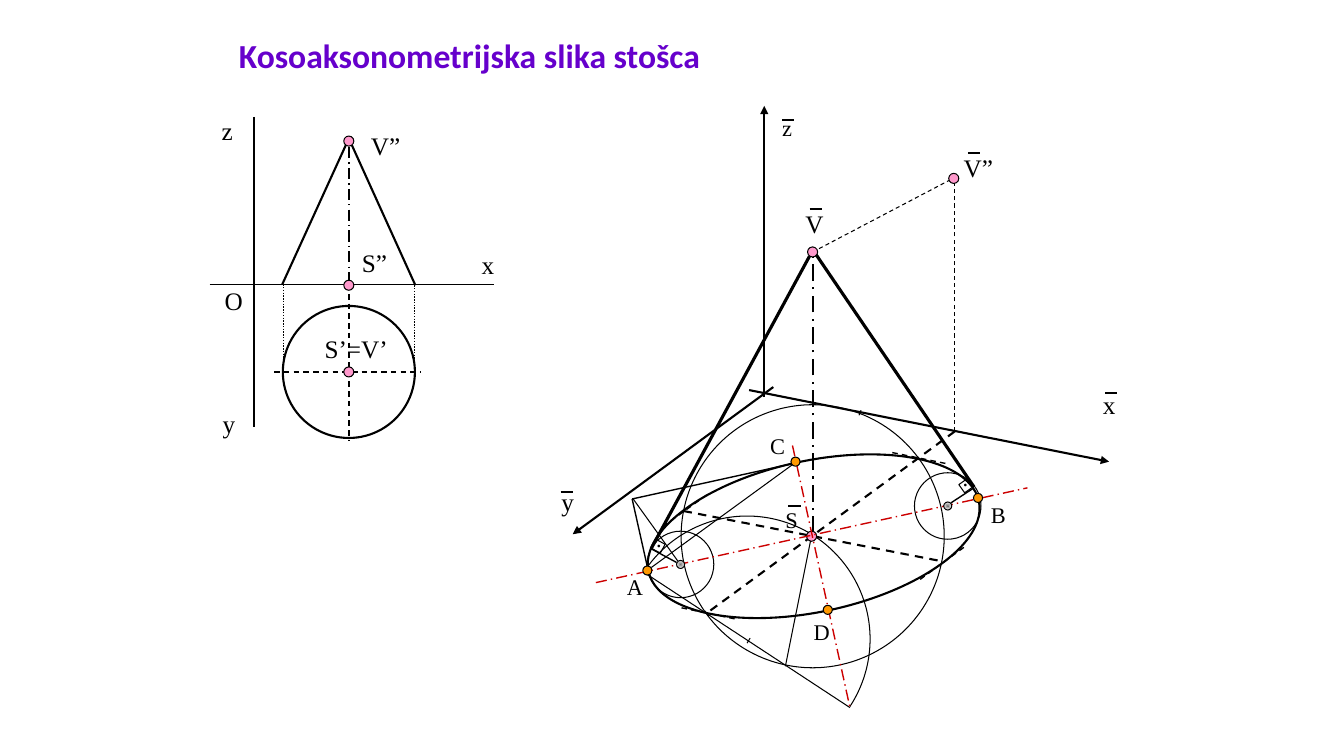
from lxml.etree import SubElement
from pptx import Presentation
from pptx.dml.color import RGBColor
from pptx.enum.dml import MSO_LINE
from pptx.enum.shapes import MSO_CONNECTOR, MSO_SHAPE
from pptx.enum.text import MSO_ANCHOR, MSO_AUTO_SIZE, PP_ALIGN
from pptx.oxml.ns import qn
from pptx.util import Inches, Pt

BLACK = RGBColor(0x00, 0x00, 0x00)
WHITE = RGBColor(0xFF, 0xFF, 0xFF)
GREY = RGBColor(0x76, 0x76, 0x76)
PURPLE = RGBColor(0x66, 0x00, 0xCC)
PINK = RGBColor(0xFF, 0x99, 0xCC)
ORANGE = RGBColor(0xFF, 0x99, 0x00)
RED = RGBColor(0xCC, 0x00, 0x00)

SOLID, DASH = MSO_LINE.SOLID, MSO_LINE.DASH
DASH_DOT, DOTTED = MSO_LINE.LONG_DASH_DOT, MSO_LINE.ROUND_DOT

deck = Presentation()
deck.slide_width = Inches(13.33)
deck.slide_height = Inches(7.5)
page = deck.slides.add_slide(deck.slide_layouts[5])


def add_line(x1, y1, x2, y2, width, dash=SOLID, color=BLACK):
    line = page.shapes.add_connector(
        MSO_CONNECTOR.STRAIGHT, Inches(x1), Inches(y1), Inches(x2), Inches(y2))
    line.line.color.rgb = color
    line.line.width = Pt(width)
    line.line.dash_style = dash
    SubElement(line._element.spPr, qn("a:effectLst"))
    return line


def add_outline(kind, x, y, width, height, weight=0.75, turn=0):
    shape = page.shapes.add_shape(
        kind, Inches(x - width / 2), Inches(y - height / 2), Inches(width), Inches(height))
    shape.shadow.inherit = False
    shape.rotation = turn
    shape.fill.background()
    shape.line.color.rgb = BLACK
    shape.line.width = Pt(weight)
    return shape


title = page.shapes.title
title.left, title.top = Inches(2.27), Inches(0.32)
title.width, title.height = Inches(5.78), Inches(0.5)
title.text_frame.text = "Kosoaksonometrijska slika stošca"
title.text_frame.auto_size = MSO_AUTO_SIZE.NONE
title.text_frame.vertical_anchor = MSO_ANCHOR.MIDDLE
heading = title.text_frame.paragraphs[0]
heading.alignment = PP_ALIGN.LEFT
heading.line_spacing = 0.9
heading.font.name = "Calibri"
heading.font.size = Pt(24)
heading.font.bold = True
heading.font.color.rgb = PURPLE

axes = [(7.58, 3.94, 7.58, 1.05), (7.43, 3.87, 11, 4.58), (7.67, 3.84, 5.68, 5.3)]
for ends in axes:
    axis = add_line(*ends, 1.5)
    SubElement(axis.get_or_add_ln(), qn("a:tailEnd"), type="triangle")

line_groups = [
    (1, SOLID, BLACK, [
        (2.08, 2.82, 4.9, 2.82), (2.52, 1.16, 2.52, 4.24),
        (6.27, 4.95, 7.86, 4.6), (6.27, 4.95, 6.42, 5.62),
        (6.45, 5.44, 6.71, 5.58), (9.43, 4.99, 9.66, 4.84)]),
    (1, DASH_DOT, BLACK, [(3.46, 1.46, 3.46, 2.82)]),
    (1, DASH, BLACK, [
        (3.46, 2.82, 3.46, 4.37), (2.72, 3.69, 4.18, 3.69),
        (6.76, 6.03, 7.29, 6.14), (8.85, 4.49, 9.39, 4.6),
        (9.56, 5.43, 9.11, 5.76), (7.01, 4.91, 6.55, 5.24)]),
    (1, DOTTED, BLACK, [(2.81, 2.82, 2.81, 3.69), (4.11, 2.83, 4.11, 3.71)]),
    (1.5, SOLID, BLACK, [(3.43, 1.44, 2.8, 2.82), (3.49, 1.44, 4.12, 2.83)]),
    (1.5, DASH_DOT, BLACK, [(8.06, 5.29, 8.06, 2.51)]),
    (1.5, DASH, BLACK, [(9.47, 4.28, 7, 6.09), (6.78, 5.07, 9.35, 5.57)]),
    (0.75, DASH, BLACK, [(9.47, 4.28, 9.47, 1.78), (8.06, 2.5, 9.49, 1.75)]),
    (0.75, SOLID, BLACK, [
        (8.54, 4.07, 8.52, 4.12), (6.99, 6.06, 7.03, 6.11),
        (7.79, 6.61, 8.05, 5.31), (6.39, 5.68, 8.43, 7.02),
        (7.44, 6.33, 7.41, 6.38), (7.86, 4.61, 6.46, 5.63),
        (6.28, 4.95, 6.74, 5.59)]),
    (2.25, SOLID, BLACK, [(8.03, 2.54, 6.46, 5.44), (8.09, 2.52, 9.66, 4.83)]),
]
for width, dash, color, segments in line_groups:
    for ends in segments:
        add_line(*ends, width, dash, color)

add_outline(MSO_SHAPE.OVAL, 8.07, 5.32, 3.35, 1.5, 1.5, 348)
add_outline(MSO_SHAPE.OVAL, 3.46, 3.69, 1.31, 1.31, 1.5)
for x, y, size in [(8.06, 5.32, 2.61), (6.75, 5.6, 0.66), (9.4, 5.02, 0.66)]:
    add_outline(MSO_SHAPE.OVAL, x, y, size, size)
for x, y, turn in [(6.53, 5.42, 28.6), (9.58, 4.82, 324.8)]:
    add_outline(MSO_SHAPE.RECTANGLE, x, y, 0.1, 0.1, turn=turn)

semicircle = add_outline(MSO_SHAPE.ARC, 7.41, 6.34, 2.44, 2.44)
for index, degrees in enumerate([213.3, 33.3]):
    semicircle.adjustments[index] = degrees * 60000 / 100000

pink_points = [(8.06, 2.5), (9.46, 1.77), (3.46, 3.69), (3.46, 1.4), (3.46, 2.83), (8.05, 5.32)]
for x, y in pink_points:
    dot = add_outline(MSO_SHAPE.OVAL, x, y, 0.1, 0.1)
    dot.fill.solid()
    dot.fill.fore_color.rgb = PINK

for ends in [(5.91, 5.78, 10.19, 4.84), (7.86, 4.42, 8.43, 7.02)]:
    add_line(*ends, 1, DASH_DOT, RED)

for x, y in [(9.7, 4.94), (6.42, 5.66), (7.89, 4.58), (8.21, 6.05)]:
    dot = add_outline(MSO_SHAPE.OVAL, x, y, 0.09, 0.09)
    dot.fill.solid()
    dot.fill.fore_color.rgb = ORANGE

for x, y in [(6.75, 5.6), (9.4, 5.02)]:
    dot = add_outline(MSO_SHAPE.OVAL, x, y, 0.08, 0.08)
    dot.fill.gradient()
    for stop, color in zip(dot.fill.gradient_stops, [GREY, WHITE]):
        stop.color.rgb = color
    gradient = dot._element.spPr.find(qn("a:gradFill"))
    gradient.remove(gradient.find(qn("a:lin")))
    focus = SubElement(gradient, qn("a:path"), path="shape")
    SubElement(focus, qn("a:fillToRect"), l="50000", t="50000", r="50000", b="50000")

overbars = [(7.76, 1.19), (5.56, 4.88), (10.96, 3.9), (8.03, 2.07), (9.6, 1.52), (7.82, 5.02)]
for x, y in overbars:
    add_line(x, y, x + 0.12, y, 1.5)

labels = {
    16: [("z", 7.66, 1.08, 0.65), ("S", 7.69, 4.97, 0.36), ("B", 9.73, 4.92, 0.39),
         ("A", 6.12, 5.64, 0.34), ("C", 7.54, 4.24, 0.33), ("D", 7.97, 6.08, 0.38),
         (".", 6.41, 5.16, 0.21), (".", 9.45, 4.56, 0.2)],
    18: [("x", 10.84, 3.81, 0.5), ("y", 5.47, 4.78, 0.44), ("V”", 9.46, 1.46, 0.55),
         ("V", 7.89, 2.02, 0.53), ("y", 2.11, 4, 0.36), ("z", 2.1, 1.09, 0.43),
         ("x", 4.68, 2.42, 0.3), ("V”", 3.58, 1.24, 0.66), ("S’=V’", 3.12, 3.26, 0.88),
         ("S”", 3.49, 2.4, 0.51), ("O", 2.13, 2.78, 0.41)],
}
for size, entries in labels.items():
    height = 0.37 if size == 16 else 0.4
    for text, x, y, width in entries:
        box = page.shapes.add_textbox(Inches(x), Inches(y), Inches(width), Inches(height))
        box.text_frame.word_wrap = True
        box.text_frame.text = text
        para = box.text_frame.paragraphs[0]
        para.font.name = "Times New Roman"
        para.font.size = Pt(size)
        para.font.color.rgb = BLACK

deck.save("out.pptx")
